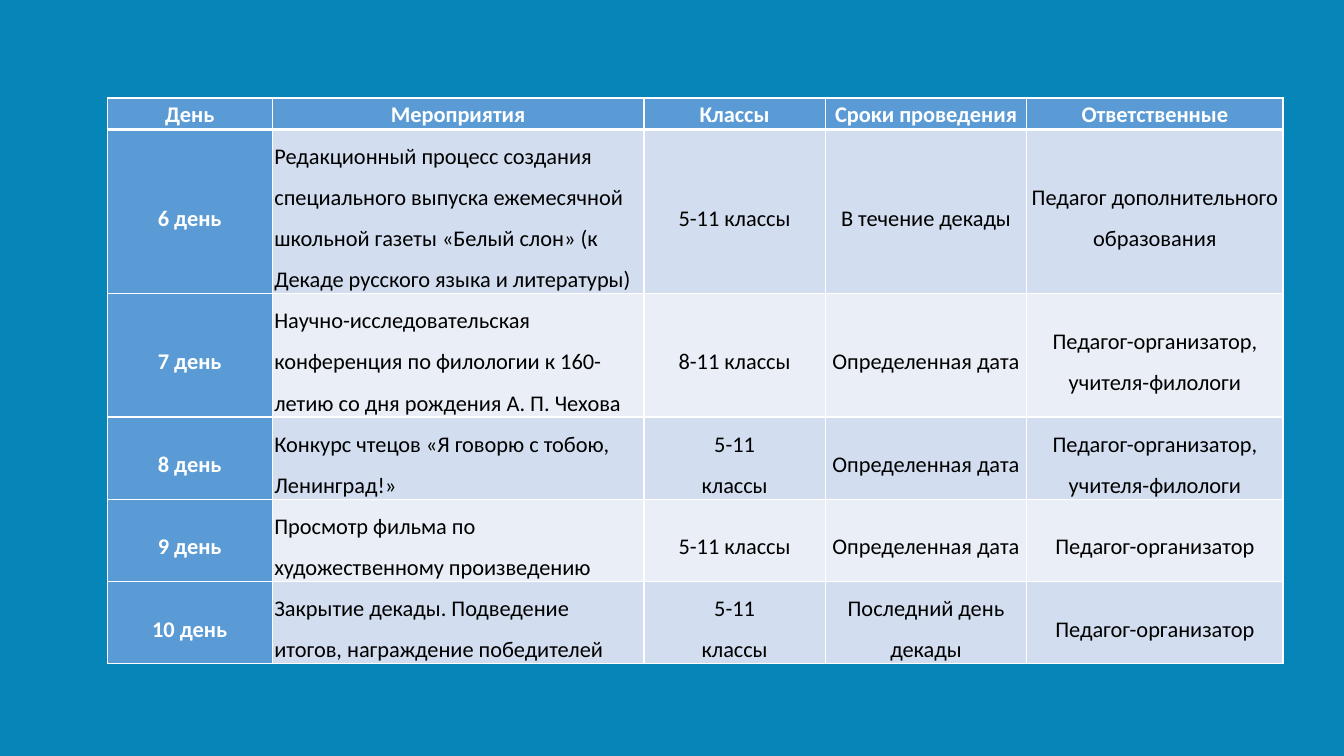
"""Build a slide with the second-half timetable of the school literature decade."""
from lxml import etree
from pptx import Presentation
from pptx import util as u
from pptx.dml.color import RGBColor
from pptx.enum import text
from pptx.oxml import ns

HEADER = ["День", "Мероприятия", "Классы", "Сроки проведения", "Ответственные"]
DAYS = [
    ["6 день",
     "Редакционный процесс создания специального выпуска ежемесячной школьной газеты "
     "«Белый слон» (к Декаде русского языка и литературы)",
     "5-11 классы", "В течение декады", "Педагог дополнительного образования"],
    ["7 день",
     "Научно-исследовательская конференция по филологии к 160-летию со дня рождения А. П. Чехова",
     "8-11 классы", "Определенная дата", "Педагог-организатор, учителя-филологи"],
    ["8 день", "Конкурс чтецов «Я говорю с тобою, Ленинград!»",
     "5-11\nклассы", "Определенная дата", "Педагог-организатор, учителя-филологи"],
    ["9 день", "Просмотр фильма по художественному произведению",
     "5-11 классы", "Определенная дата", "Педагог-организатор"],
    ["10 день", "Закрытие декады. Подведение итогов, награждение победителей",
     "5-11\nклассы", "Последний день декады", "Педагог-организатор"],
]

BACKGROUND = RGBColor(0x06, 0x85, 0xB8)
ACCENT = RGBColor(0x5B, 0x9B, 0xD5)
BANDS = [RGBColor(0xD2, 0xDE, 0xEF), RGBColor(0xEA, 0xEF, 0xF7)]
WHITE = RGBColor(0xFF, 0xFF, 0xFF)
BLACK = RGBColor(0, 0, 0)

LEFT, TOP = 76.5, 70
COL_WIDTHS = [118, 265.5, 129.5, 144, 183]
LINE_HEIGHT = 29.3
ROW_HEIGHTS = [22.5] + [LINE_HEIGHT * lines for lines in (4, 3, 2, 2, 2)]
CELL_FORMAT = {"vertical_anchor": text.MSO_ANCHOR.MIDDLE,
               "margin_left": u.Pt(1.5), "margin_right": u.Pt(1.5),
               "margin_top": 0, "margin_bottom": 0}


def set_all(obj, values):
    for name, value in values.items():
        setattr(obj, name, value)


def add_borders(cell, widths):
    tc_pr = cell._tc.get_or_add_tcPr()
    for i, (side, width) in enumerate(widths.items()):
        ln = etree.Element(ns.qn(f"a:ln{side}"), w=str(u.Pt(width)))
        fill = etree.SubElement(ln, ns.qn("a:solidFill"))
        etree.SubElement(fill, ns.qn("a:srgbClr"), val=str(WHITE))
        tc_pr.insert(i, ln)


def fill_cell(cell, content, row, col):
    header, accent = row == 0, row == 0 or col == 0
    set_all(cell, CELL_FORMAT)
    cell.fill.solid()
    cell.fill.fore_color.rgb = ACCENT if accent else BANDS[(row - 1) % 2]
    cell.text_frame.text = content
    left = col == 1 and not header
    for p in cell.text_frame.paragraphs:
        set_all(p, {"alignment": text.PP_ALIGN.LEFT if left else text.PP_ALIGN.CENTER,
                    "line_spacing": 1.07 if header else 1.5})
        for r in p.runs:
            set_all(r.font, {"name": "Calibri", "size": u.Pt(16), "bold": accent})
            r.font.color.rgb = WHITE if accent else BLACK
    add_borders(cell, {"L": 1, "R": 1, "T": 3 if row == 1 else 1, "B": 3 if header else 1})


def main():
    prs = Presentation()
    set_all(prs, {"slide_width": u.Pt(960), "slide_height": u.Pt(540)})
    s = prs.slides.add_slide(prs.slide_layouts[6])
    s.background.fill.solid()
    s.background.fill.fore_color.rgb = BACKGROUND

    rows = [HEADER] + DAYS
    table = s.shapes.add_table(len(rows), len(HEADER), u.Pt(LEFT), u.Pt(TOP),
                               u.Pt(sum(COL_WIDTHS)), u.Pt(sum(ROW_HEIGHTS))).table
    for column, width in zip(table.columns, COL_WIDTHS):
        column.width = u.Pt(width)
    for i, (values, height) in enumerate(zip(rows, ROW_HEIGHTS)):
        table.rows[i].height = u.Pt(height)
        for j, content in enumerate(values):
            fill_cell(table.cell(i, j), content, i, j)
    prs.save("out.pptx")


if __name__ == "__main__":
    main()
